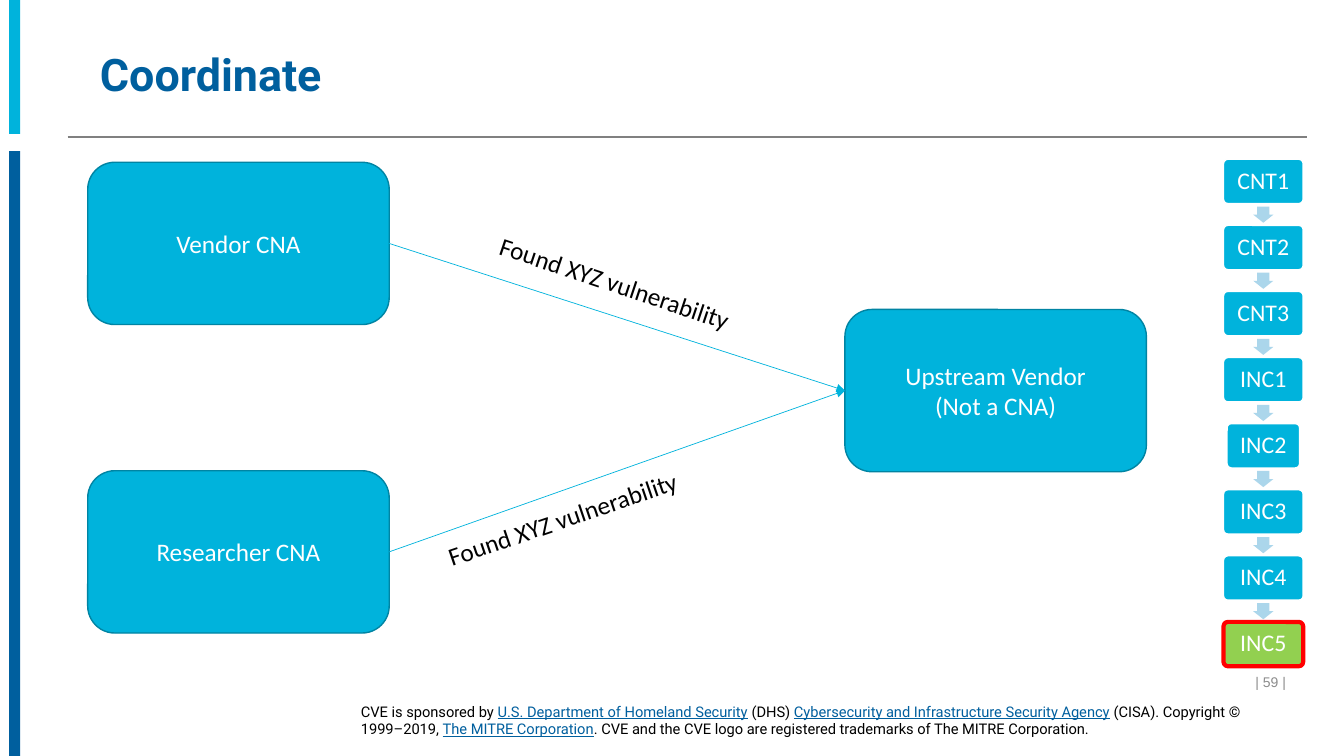
from lxml import etree
from pptx import Presentation
from pptx import util as u
from pptx.dml import color
from pptx.enum import shapes, text
from pptx.oxml import ns

CYAN, NAVY, WHITE, BLACK = "00B3DC", "005F9E", "FFFFFF", "000000"
SHAPE, ALIGN, ANCHOR = shapes.MSO_SHAPE, text.PP_ALIGN, text.MSO_ANCHOR


def rgb(value):
    return color.RGBColor.from_string(value)


def apply(target, values):
    for name, value in values.items():
        setattr(target, name, value)


class SlideBuilder:
    """Holds the current slide and its default text style."""

    def __init__(self, slide):
        self.slide = slide
        self.style = {"name": "Calibri", "size": u.Pt(18)}

    def box(self, bounds):
        return [u.Inches(value) for value in bounds]

    def fill_text(self, shape, lines, ink, font=None, paragraph_format=None, inset=None,
                  anchor=ANCHOR.MIDDLE, wrap=True):
        """Each line is a list of (words, linked) runs or a plain string."""
        frame = shape.text_frame
        apply(frame, {"word_wrap": wrap, "vertical_anchor": anchor})
        if inset is not None:
            sides = ("margin_left", "margin_top", "margin_right", "margin_bottom")
            apply(frame, dict.fromkeys(sides, u.Inches(inset)))
        for index, line in enumerate(lines):
            paragraph = frame.add_paragraph() if index else frame.paragraphs[0]
            apply(paragraph, paragraph_format or {})
            for words, linked in [(line, False)] if isinstance(line, str) else line:
                run = paragraph.add_run()
                run.text = words
                apply(run.font, {**self.style, **(font or {})})
                run.font.underline = linked or None
                run.font.color.rgb = rgb(NAVY if linked else ink)

    def title(self, bounds, words):
        title = self.slide.shapes.title
        places = dict(zip(("left", "top", "width", "height"), self.box(bounds)))
        apply(title, places)
        self.fill_text(title, [words], NAVY,
                       {"name": "Roboto", "size": u.Pt(32), "bold": True},
                       {"alignment": ALIGN.LEFT, "line_spacing": u.Pt(32)})

    def label(self, bounds, lines, rotation=0, ink=BLACK, **options):
        label = self.slide.shapes.add_textbox(*self.box(bounds))
        label.rotation = rotation
        self.fill_text(label, lines, ink, **options)

    def block(self, kind, bounds, fill, line=None, line_width=1.0, adjustments=()):
        shape = self.slide.shapes.add_shape(kind, *self.box(bounds))
        shape.shadow.inherit = False
        shape.fill.solid()
        shape.fill.fore_color.rgb = rgb(fill)
        if line:
            shape.line.color.rgb = rgb(line)
            shape.line.width = u.Pt(line_width)
        else:
            shape.line.fill.background()
        for index, value in enumerate(adjustments):
            shape.adjustments[index] = value
        return shape

    def actor(self, left, top, lines):
        shape = self.block(SHAPE.ROUNDED_RECTANGLE, (left, top, 2.99, 1.61), CYAN, "0084A3")
        self.fill_text(shape, lines, WHITE, paragraph_format={"alignment": ALIGN.CENTER})
        return shape

    def line(self, ends, ink, width):
        connector = self.slide.shapes.add_connector(
            shapes.MSO_CONNECTOR.STRAIGHT, *self.box(ends))
        connector.line.color.rgb = rgb(ink)
        connector.line.width = u.Pt(width)
        properties = connector._element.spPr
        etree.SubElement(properties, ns.qn("a:effectLst"))
        return connector

    def arrow(self, source, target):
        connector = self.line((0, 0, 1, 1), CYAN, 0.5)
        connector.begin_connect(source, 3)
        connector.end_connect(target, 1)
        outline = connector._element.spPr.find(ns.qn("a:ln"))
        etree.SubElement(outline, ns.qn("a:tailEnd"), type="triangle")


def main():
    presentation = Presentation()
    presentation.slide_width = u.Inches(13.33)
    presentation.slide_height = u.Inches(7.5)
    builder = SlideBuilder(presentation.slides.add_slide(presentation.slide_layouts[5]))

    # Side bars, title and rule
    builder.block(SHAPE.RECTANGLE, (0.09, 0, 0.11, 1.33), CYAN)
    builder.block(SHAPE.RECTANGLE, (0.09, 1.5, 0.11, 6), NAVY)
    builder.title((0.89, 0.3, 10.2, 0.95), "Coordinate")
    builder.line((0.67, 1.36, 12.96, 1.36), "808080", 1)

    # Footer and page number
    builder.label((3.53, 6.92, 9.16, 0.45), [[
        ("CVE is sponsored by ", False),
        ("U.S. Department of Homeland Security", True),
        (" (DHS) ", False),
        ("Cybersecurity and Infrastructure Security Agency", True),
        (" (CISA). Copyright © 1999–2019, ", False),
        ("The MITRE Corporation", True),
        (". CVE and the CVE logo are registered trademarks of The MITRE Corporation.", False),
    ]], font={"name": "Roboto", "size": u.Pt(10.5)}, inset=0.05, anchor=ANCHOR.TOP)
    builder.label((12.17, 6.7, 0.72, 0.2), ["| 59 | "], ink="8C8C8C",
                  font={"name": "Arial", "size": u.Pt(10)},
                  paragraph_format={"alignment": ALIGN.RIGHT}, anchor=ANCHOR.BOTTOM)

    # Actors and their reports
    vendor = builder.actor(0.87, 1.61, ["Vendor CNA"])
    researcher = builder.actor(0.87, 4.67, ["Researcher CNA"])
    upstream = builder.actor(8.38, 3.07, ["Upstream Vendor", "(Not a CNA)"])
    for source, left, top, rotation in ((vendor, 4.81, 2.61, 18.5),
                                        (researcher, 4.29, 4.94, 341.2)):
        builder.arrow(source, upstream)
        builder.label((left, top, 2.61, 0.4), ["Found XYZ vulnerability"], rotation,
                      anchor=ANCHOR.TOP, wrap=False)

    # Progress chain, last step highlighted
    steps = ["CNT1", "CNT2", "CNT3", "INC1", "INC2", "INC3", "INC4", "INC5"]
    center, first_top, pitch = 12.53, 1.58, 4.59 / 7
    for index, step in enumerate(steps):
        top = first_top + index * pitch
        last = index == len(steps) - 1
        width = 0.72 if step == "INC2" else 0.79
        fill, line, line_width = ("92D050", "FF0000", 3) if last else (CYAN, WHITE, 1)
        shape = builder.block(SHAPE.ROUNDED_RECTANGLE, (center - width / 2, top, width, 0.44),
                              fill, line, line_width, [0.1])
        builder.fill_text(shape, [step], WHITE, {"size": u.Pt(17)},
                          {"alignment": ALIGN.CENTER, "line_spacing": 0.9}, inset=0.07)
        if not last:
            builder.block(SHAPE.DOWN_ARROW, (center - 0.1, top + 0.47, 0.2, 0.16),
                          "ABD6EB", adjustments=[0.6, 0.5])

    presentation.save("out.pptx")


if __name__ == "__main__":
    main()
